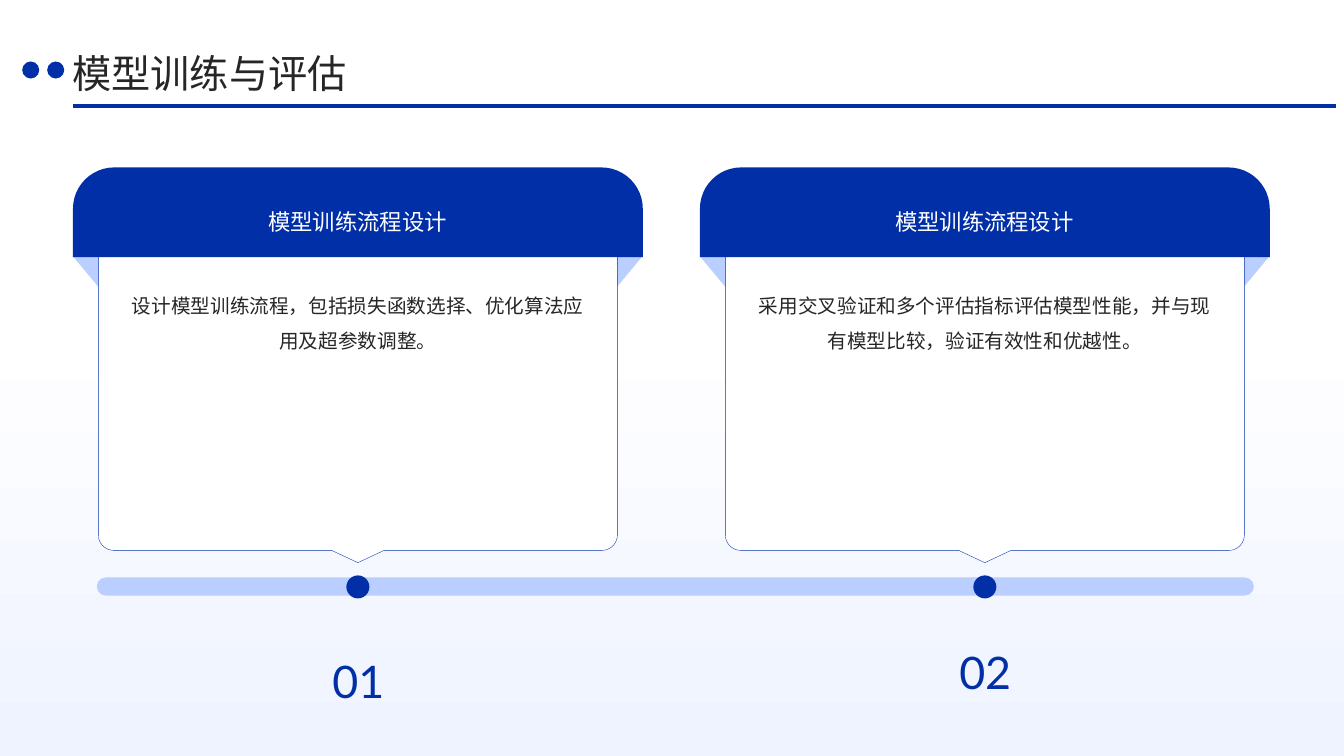
import math
import pptx
import pptx.dml.color
import pptx.enum.shapes
import pptx.enum.text
import pptx.oxml.ns
import pptx.util
import lxml.etree

Cm = pptx.util.Cm
SHAPE = pptx.enum.shapes.MSO_SHAPE
ALIGN = pptx.enum.text.PP_ALIGN
ANCHOR = pptx.enum.text.MSO_ANCHOR
COLORS = {"blue": "002FA7", "pale": "BACEFF", "mist": "EFF3FF",
          "ink": "262626", "white": "FFFFFF"}
CHINESE = "Noto Sans CJK SC"


def add_text(text, left, top, width, height, size=14, font=CHINESE, color="ink",
             align=ALIGN.CENTER, anchor=ANCHOR.MIDDLE, spacing=1.5):
    box = page.shapes.add_textbox(Cm(left), Cm(top), Cm(width), Cm(height))
    frame = box.text_frame
    frame.word_wrap = True
    frame.vertical_anchor = anchor
    frame.margin_left = frame.margin_right = frame.margin_top = frame.margin_bottom = 0
    para = frame.paragraphs[0]
    para.alignment = align
    para.line_spacing = spacing
    span = para.add_run()
    span.text = text
    span.font.size = pptx.util.Pt(size)
    span.font.name = font
    span.font.color.rgb = pptx.dml.color.RGBColor.from_string(COLORS[color])
    east = lxml.etree.SubElement(span.font._element, pptx.oxml.ns.qn("a:ea"))
    east.set("typeface", font)


def add_solid(kind, left, top, width, height, color):
    shape = page.shapes.add_shape(kind, Cm(left), Cm(top), Cm(width), Cm(height))
    shape.shadow.inherit = False
    shape.fill.solid()
    shape.fill.fore_color.rgb = pptx.dml.color.RGBColor.from_string(COLORS[color])
    shape.line.fill.background()
    return shape


deck = pptx.Presentation()
deck.slide_width = Cm(33.87)
deck.slide_height = Cm(19.05)
page = deck.slides.add_slide(deck.slide_layouts[6])

backdrop = add_solid(SHAPE.RECTANGLE, 0, 0, 33.87, 19.05, "white")
backdrop.fill.gradient()
backdrop.fill.gradient_angle = 270
for stop, position, color in zip(backdrop.fill.gradient_stops, (0.43, 1), ("white", "mist")):
    stop.position = position
    stop.color.rgb = pptx.dml.color.RGBColor.from_string(COLORS[color])

add_text("模型训练与评估", 1.83, 1.12, 29.64, 1.3, size=28, align=ALIGN.LEFT, spacing=1.1)
for left in (0.56, 1.19):
    add_solid(SHAPE.OVAL, left, 1.55, 0.43, 0.43, "blue")
rule = page.shapes.add_connector(pptx.enum.shapes.MSO_CONNECTOR.STRAIGHT,
                                 Cm(1.83), Cm(2.67), Cm(33.68), Cm(2.67))
rule.line.width = pptx.util.Pt(2.25)
rule.line.color.rgb = pptx.dml.color.RGBColor.from_string(COLORS["blue"])
lxml.etree.SubElement(rule._element.spPr, pptx.oxml.ns.qn("a:effectLst"))

timeline = add_solid(SHAPE.ROUNDED_RECTANGLE, 2.44, 14.55, 29.16, 0.46, "pale")
timeline.adjustments[0] = 0.5

CARD_PITCH = 15.8
CARD_WIDTH, CARD_TOP, CARD_BOTTOM, RADIUS = 13.08, 5.08, 13.87, 0.39
cards = [
    ("01", "模型训练流程设计", "设计模型训练流程，包括损失函数选择、优化算法应用及超参数调整。", 15.85),
    ("02", "模型训练流程设计", "采用交叉验证和多个评估指标评估模型性能，并与现有模型比较，验证有效性和优越性。", 15.62),
]
for index, (number, heading, body, number_top) in enumerate(cards):
    shift = index * CARD_PITCH
    center = 9.02 + shift
    add_solid(SHAPE.OVAL, center - 0.29, 14.5, 0.58, 0.58, "blue")
    left_fold = add_solid(SHAPE.RIGHT_TRIANGLE, 1.83 + shift, 6.45, 0.81, 0.97, "pale")
    left_fold.rotation = 180
    right_fold = add_solid(SHAPE.RIGHT_TRIANGLE, 15.39 + shift, 6.45, 0.81, 0.97, "pale")
    right_fold._element.spPr.xfrm.set("flipV", "1")

    near, far = center - CARD_WIDTH / 2, center + CARD_WIDTH / 2
    corners = [(far - RADIUS, CARD_TOP + RADIUS, 270), (far - RADIUS, CARD_BOTTOM - RADIUS, 0),
               (near + RADIUS, CARD_BOTTOM - RADIUS, 90), (near + RADIUS, CARD_TOP + RADIUS, 180)]
    points = []
    for corner, (x, y, start) in enumerate(corners):
        if corner == 2:
            points += [(center + 0.66, CARD_BOTTOM), (center, CARD_BOTTOM + 0.31),
                       (center - 0.66, CARD_BOTTOM)]
        for degrees in range(start, start + 91, 10):
            angle = math.radians(degrees)
            points.append((x + RADIUS * math.cos(angle), y + RADIUS * math.sin(angle)))
    outline = [(Cm(x), Cm(y)) for x, y in points]
    builder = page.shapes.build_freeform(*outline[0])
    builder.add_line_segments(outline[1:], close=True)
    card = builder.convert_to_shape()
    card.shadow.inherit = False
    card.fill.solid()
    card.fill.fore_color.rgb = pptx.dml.color.RGBColor.from_string(COLORS["white"])
    card.line.width = pptx.util.Pt(0.25)
    card.line.color.rgb = pptx.dml.color.RGBColor.from_string(COLORS["blue"])

    header = add_solid(SHAPE.ROUND_2_SAME_RECTANGLE, 1.84 + shift, 4.22, 14.36, 2.26, "blue")
    header.adjustments[0] = 0.46
    add_text(heading, 3.28 + shift, 4.45, 11.46, 1.93, size=16, color="white")
    add_text(body, 3.28 + shift, 7.11, 11.48, 6.2, anchor=ANCHOR.TOP)
    add_text(number, 5.59 + shift, number_top, 6.88, 1.93, size=32, font="Lato", color="blue")

deck.save("out.pptx")
